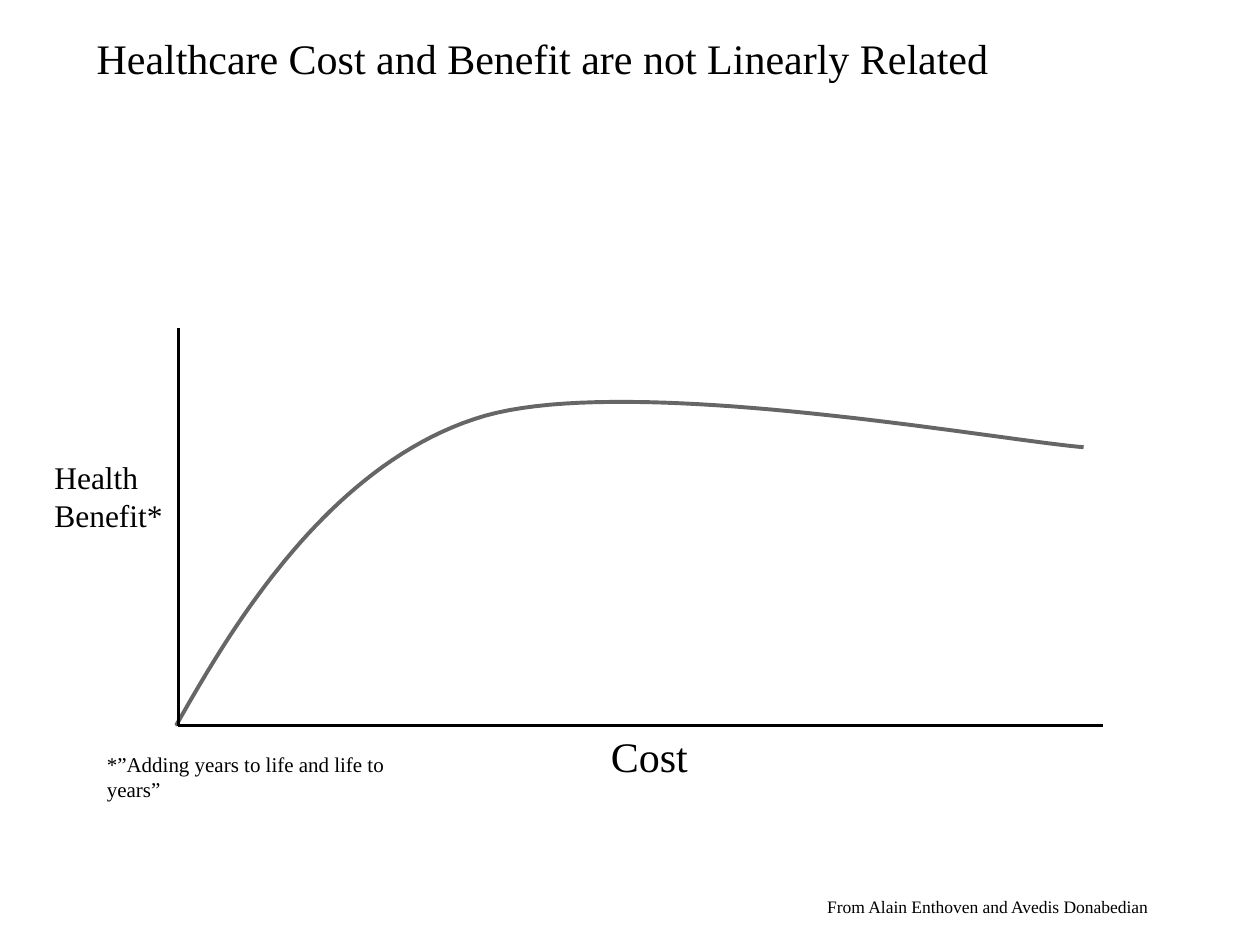
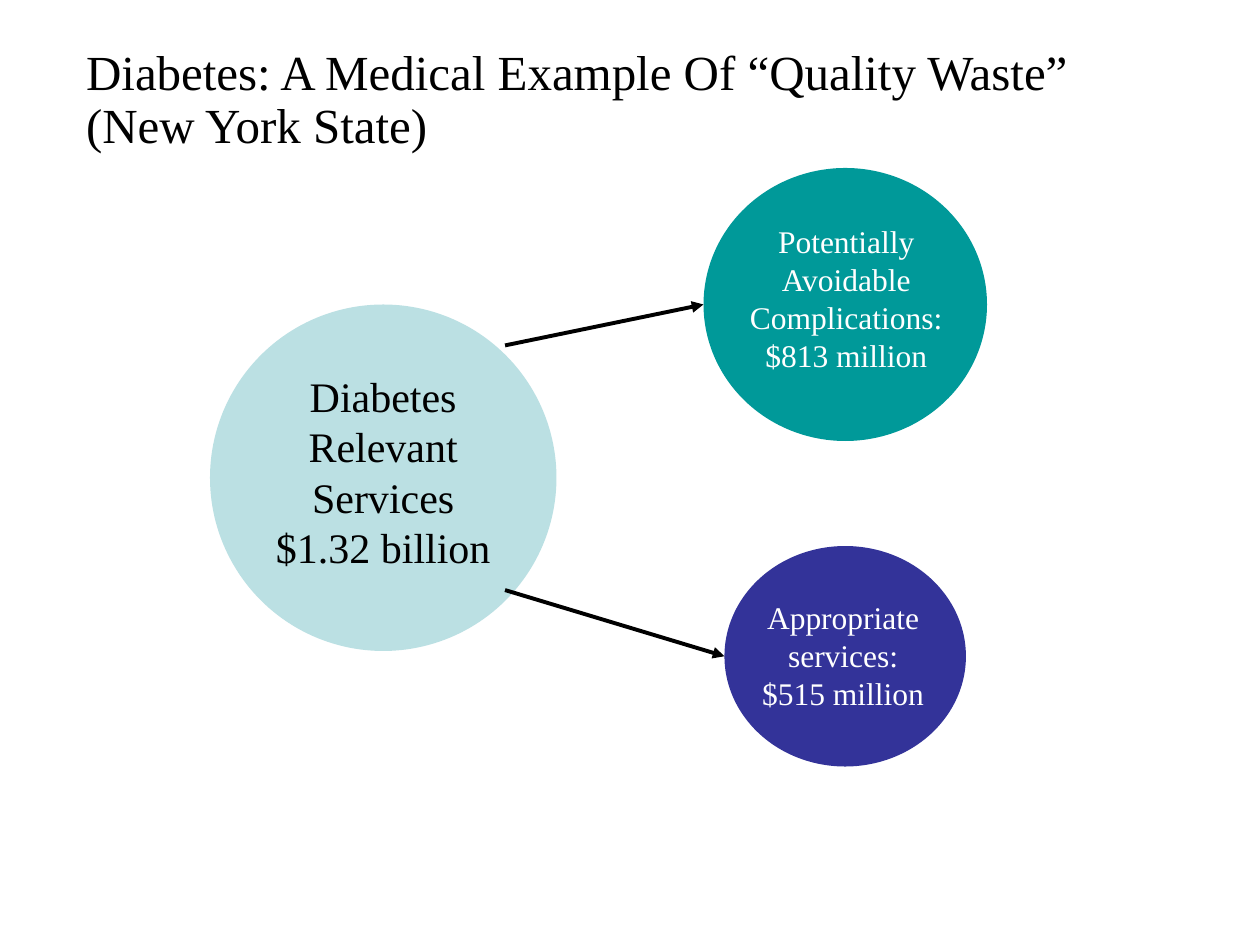
from dataclasses import dataclass

import pptx
import pptx.dml.color
import pptx.enum.shapes
import pptx.enum.text
import pptx.oxml.ns
import pptx.util
from lxml import etree

WIDTH, HEIGHT = 10, 7.5
COLS = 120
CELL = pptx.util.Inches(WIDTH / COLS)
FONT = "Times New Roman"
BLACK, WHITE, GRAY = "000000", "FFFFFF", "666666"
LEFT = pptx.enum.text.PP_ALIGN.LEFT
CENTER = pptx.enum.text.PP_ALIGN.CENTER
TOP = pptx.enum.text.MSO_ANCHOR.TOP
FIT = pptx.enum.text.MSO_AUTO_SIZE


@dataclass(frozen=True)
class Box:
    col: float
    row: float
    cols: float
    rows: float

    def emu(self) -> list[int]:
        return [cells(n) for n in (self.col, self.row, self.cols, self.rows)]


@dataclass(frozen=True)
class Label:
    text: str
    box: Box
    size: int


@dataclass(frozen=True)
class Bubble:
    box: Box
    fill: str
    text: str
    area: Box
    size: int
    color: str


Point = tuple[float, float]


def cells(count: float) -> int:
    return round(count * CELL)


def rgb(code: str) -> pptx.dml.color.RGBColor:
    return pptx.dml.color.RGBColor.from_string(code)


def write(shape, text: str, *, size: int, color: str = BLACK, align=LEFT,
          spacing: float | None = None, fit=FIT.SHAPE_TO_FIT_TEXT) -> None:
    frame = shape.text_frame
    frame.text = text
    frame.word_wrap = True
    frame.auto_size = fit
    frame.vertical_anchor = TOP
    for para in frame.paragraphs:
        para.alignment = align
        para.line_spacing = spacing
        para.font.name = FONT
        para.font.size = pptx.util.Pt(size)
        para.font.color.rgb = rgb(color)


def place(slide, text: str, box: Box, **style) -> None:
    write(slide.shapes.add_textbox(*box.emu()), text, **style)


def start(deck, text: str, box: Box, size: int):
    slide = deck.slides.add_slide(deck.slide_layouts[5])
    title = slide.shapes.title
    title.left, title.top, title.width, title.height = box.emu()
    write(title, text, size=size, spacing=0.9, fit=FIT.NONE)
    return slide


def line(slide, head: Point, tail: Point, width: float, arrow: bool = False) -> None:
    link = slide.shapes.add_connector(
        pptx.enum.shapes.MSO_CONNECTOR.STRAIGHT, *[cells(n) for n in head + tail])
    link.line.width = pptx.util.Pt(width)
    link.line.color.rgb = rgb(BLACK)
    name = pptx.oxml.ns.qn
    if arrow:
        etree.SubElement(link.line._get_or_add_ln(), name("a:tailEnd"), type="triangle")
    etree.SubElement(link._element.spPr, name("a:effectLst"))


def bezier(knots: list[Point], steps: int = 40) -> list[Point]:
    points = []
    for step in range(1, steps + 1):
        t = step / steps
        shares = ((1 - t) ** 3, 3 * t * (1 - t) ** 2, 3 * t * t * (1 - t), t ** 3)
        points.append(tuple(sum(s * k[axis] for s, k in zip(shares, knots))
                            for axis in (0, 1)))
    return points


def curve(slide, knots: list[Point]) -> None:
    points = [knots[0]]
    for first in range(0, len(knots) - 1, 3):
        points += bezier(knots[first:first + 4])
    trace = [(cells(x), cells(y)) for x, y in points]
    pen = slide.shapes.build_freeform(*trace[0])
    pen.add_line_segments(trace[1:], close=False)
    shape = pen.convert_to_shape()
    shape.shadow.inherit = False
    shape.fill.background()
    shape.line.color.rgb = rgb(GRAY)
    shape.line.width = pptx.util.Pt(2.25)


def draw(slide, bubble: Bubble) -> None:
    shape = slide.shapes.add_shape(
        pptx.enum.shapes.MSO_SHAPE.OVAL, *bubble.box.emu())
    shape.shadow.inherit = False
    shape.fill.solid()
    shape.fill.fore_color.rgb = rgb(bubble.fill)
    shape.line.fill.background()
    place(slide, bubble.text, bubble.area, size=bubble.size,
          color=bubble.color, align=CENTER)


def benefit(deck) -> None:
    slide = start(deck, "Healthcare Cost and Benefit are not Linearly Related",
                  Box(8, 3, 105, 15), 24)
    base = (17, 69.1)
    curve(slide, [(18.2, 66.6), (18.2, 66.6), (15.1, 72), (18.2, 66.6),
                  (22.8, 58.7), (32, 43.7), (46.2, 39.6),
                  (60.4, 35.6), (94.8, 41.9), (103.2, 42.6)])
    line(slide, base, (17, 31.2), 1.5)
    line(slide, base, (105, 69.1), 1.5)
    labels = [
        Label("Health Benefit*", Box(4, 43, 13, 8.5), 18),
        Label("Cost", Box(57, 69, 13, 4.8), 24),
        Label("*”Adding years to life and life to years”", Box(9, 71, 33.8, 3.6), 12),
        Label("From Alain Enthoven and Avedis Donabedian",
              Box(77.6, 84.7, 33.6, 3.2), 10),
    ]
    for label in labels:
        place(slide, label.text, label.box, size=label.size)


def waste(deck) -> None:
    slide = start(deck, "Diabetes: A Medical Example Of “Quality Waste” (New York State)",
                  Box(7, 4, 104, 12), 28)
    draw(slide, Bubble(Box(20, 29, 33, 33), "BBE0E3",
                       "Diabetes\nRelevant Services\n$1.32 billion",
                       Box(22, 34.7, 29, 20.4), 24, BLACK))
    parts = [
        (32.9, Bubble(Box(67, 16, 27, 26), "009999",
                      "Potentially Avoidable Complications:\n$813 million",
                      Box(68.6, 20.6, 24, 15.6), 18, WHITE)),
        (56.2, Bubble(Box(69, 52, 23, 21), "333399",
                      "Appropriate services:\n$515 million",
                      Box(70.3, 56.4, 20, 12.1), 18, WHITE)),
    ]
    for row, part in parts:
        draw(slide, part)
        box = part.box
        line(slide, (48.1, row), (box.col, box.row + box.rows / 2), 2.25, arrow=True)


def main() -> None:
    deck = pptx.Presentation()
    deck.slide_width = pptx.util.Inches(WIDTH)
    deck.slide_height = pptx.util.Inches(HEIGHT)
    benefit(deck)
    waste(deck)
    deck.save("out.pptx")


if __name__ == "__main__":
    main()
